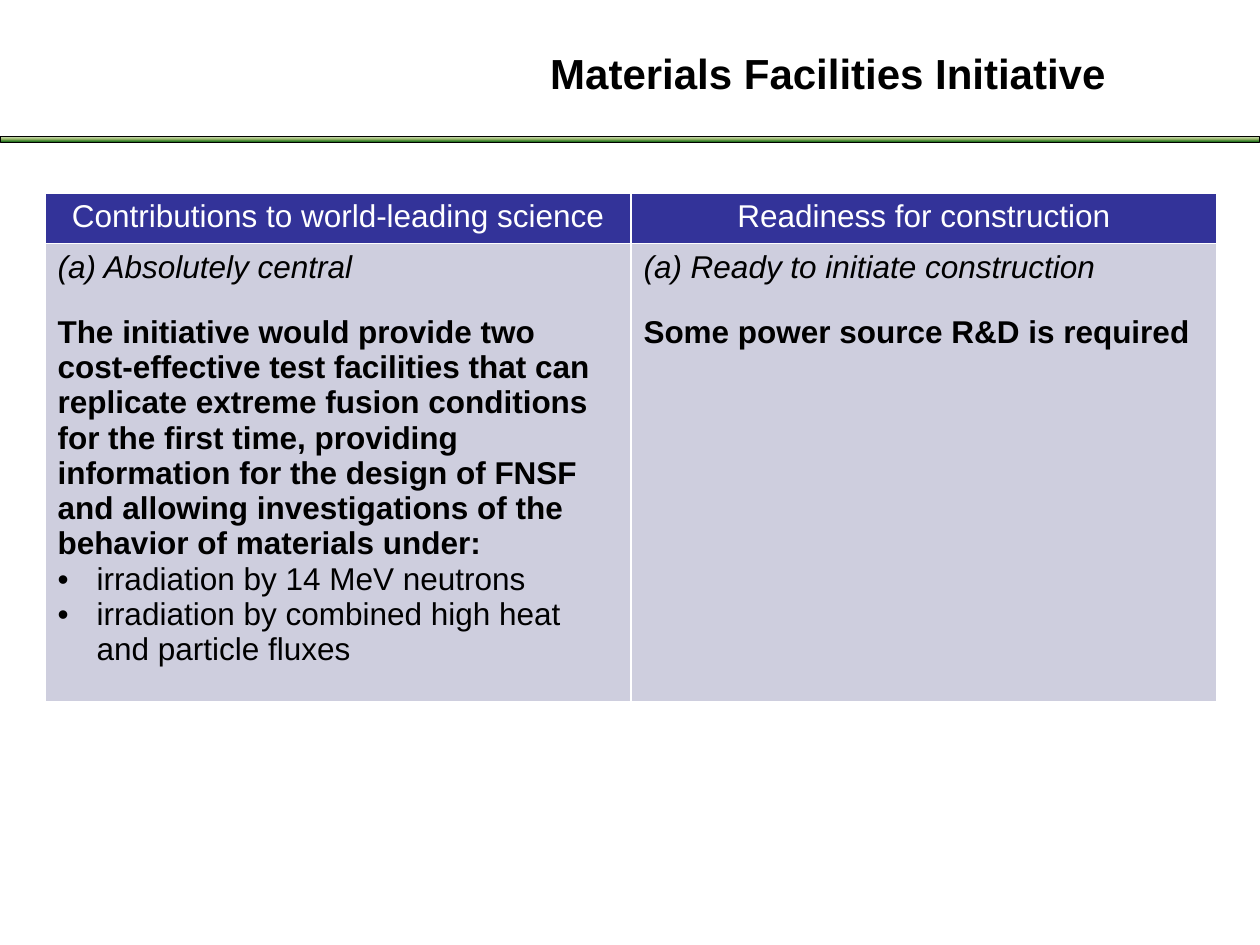
from lxml import etree
from pptx import Presentation
from pptx.dml.color import RGBColor
from pptx.enum.shapes import MSO_SHAPE
from pptx.enum.text import MSO_ANCHOR, PP_ALIGN
from pptx.oxml import parse_xml
from pptx.oxml.ns import nsdecls, qn
from pptx.util import Pt

RECTANGLE = MSO_SHAPE.RECTANGLE
MIDDLE = MSO_ANCHOR.MIDDLE
CENTER, LEFT = PP_ALIGN.CENTER, PP_ALIGN.LEFT

SCALE = 914400 // 126  # EMU per px
FONT = "Arial"
COLORS = {
    "text": "000000",
    "white": "FFFFFF",
    "header": "333399",
    "body": "CECEDE",
    "rule_top": "DDEBCF",
    "rule_middle": "9CB86E",
    "rule_bottom": "156B13",
}

HEADERS = ["Contributions to world-leading science", "Readiness for construction"]
# Each cell: (style, text) paragraphs
BODIES = [
    [
        ("rating", "(a) Absolutely central"),
        ("reason", "The initiative would provide two cost-effective test facilities "
                   "that can replicate extreme fusion conditions for the first time, "
                   "providing information for the design of FNSF and allowing "
                   "investigations of the behavior of materials under:"),
        ("bullet", "irradiation by 14 MeV neutrons"),
        ("bullet", "irradiation by combined high heat and particle fluxes"),
    ],
    [
        ("rating", "(a) Ready to initiate construction"),
        ("reason", "Some power source R&D is required"),
    ],
]


def px(length):
    return length * SCALE


def color(name):
    return RGBColor.from_string(COLORS[name])


def write(paragraph, text, size, color_name, bold=False, italic=False, align=LEFT):
    paragraph.text = text
    paragraph.alignment = align
    for run in paragraph.runs:
        font = run.font
        font.name, font.size = FONT, Pt(size)
        font.bold, font.italic = bold, italic
        font.color.rgb = color(color_name)


def add_bullet(paragraph, indent):
    properties = paragraph._p.get_or_add_pPr()
    properties.set("marL", str(px(indent)))
    properties.set("indent", str(-px(indent)))
    etree.SubElement(properties, qn("a:buFont"), typeface=FONT)
    etree.SubElement(properties, qn("a:buChar"), char="•")


def style_cell(cell, fill_name):
    properties = cell._tc.get_or_add_tcPr()
    for side in ("lnL", "lnR", "lnT", "lnB"):
        properties.append(parse_xml(
            f'<a:{side} {nsdecls("a")} w="{Pt(1)}"><a:solidFill>'
            f'<a:srgbClr val="{COLORS["white"]}"/></a:solidFill></a:{side}>'))
    cell.fill.solid()
    cell.fill.fore_color.rgb = color(fill_name)


def add_rule(slide, left, top, width, height):
    rule = slide.shapes.add_shape(RECTANGLE, px(left), px(top), px(width), px(height))
    rule.shadow.inherit = False
    rule.line.color.rgb = color("text")
    rule.line.width = Pt(0.5)
    # Three-stop vertical gradient
    rule.fill.gradient()
    gradient = rule._element.spPr.find(qn("a:gradFill"))
    stops = "".join(
        f'<a:gs pos="{position}"><a:srgbClr val="{COLORS[name]}"/></a:gs>'
        for position, name in ((0, "rule_top"), (50000, "rule_middle"), (100000, "rule_bottom")))
    gradient.getparent().replace(gradient, parse_xml(
        f'<a:gradFill {nsdecls("a")}><a:gsLst>{stops}</a:gsLst>'
        '<a:lin ang="5400000" scaled="0"/></a:gradFill>'))


def add_title(slide, left, top, width, height):
    title = slide.shapes.add_textbox(px(left), px(top), px(width), px(height))
    frame = title.text_frame
    frame.word_wrap = True
    frame.vertical_anchor = MIDDLE
    write(frame.paragraphs[0], "Materials Facilities Initiative", 24, "text",
          bold=True, align=CENTER)


def add_assessment(slide, left, top, width, height):
    header_height = 50
    table = slide.shapes.add_table(
        2, len(HEADERS), px(left), px(top), px(width), px(height)).table
    table.rows[0].height = px(header_height)
    table.rows[1].height = px(height - header_height)

    for column, (header, body) in enumerate(zip(HEADERS, BODIES)):
        table.columns[column].width = px(width // len(HEADERS))
        # Header cell
        cell = table.cell(0, column)
        style_cell(cell, "header")
        write(cell.text_frame.paragraphs[0], header, 18, "white", align=CENTER)
        # Body cell
        cell = table.cell(1, column)
        style_cell(cell, "body")
        frame = cell.text_frame
        for index, (style, text) in enumerate(body):
            paragraph = frame.add_paragraph() if index else frame.paragraphs[0]
            if style == "reason":
                paragraph.space_before = Pt(17)
            elif style == "bullet":
                add_bullet(paragraph, 39)
            write(paragraph, text, 18, "text",
                  bold=style == "reason", italic=style == "rating")


def main():
    presentation = Presentation()
    presentation.slide_width, presentation.slide_height = px(1260), px(945)
    slide = presentation.slides.add_slide(presentation.slide_layouts[6])
    add_rule(slide, 0, 136, 1260, 6)
    add_title(slide, 419, 23, 818, 100)
    add_assessment(slide, 45, 193, 1172, 480)
    presentation.save("out.pptx")


if __name__ == "__main__":
    main()
